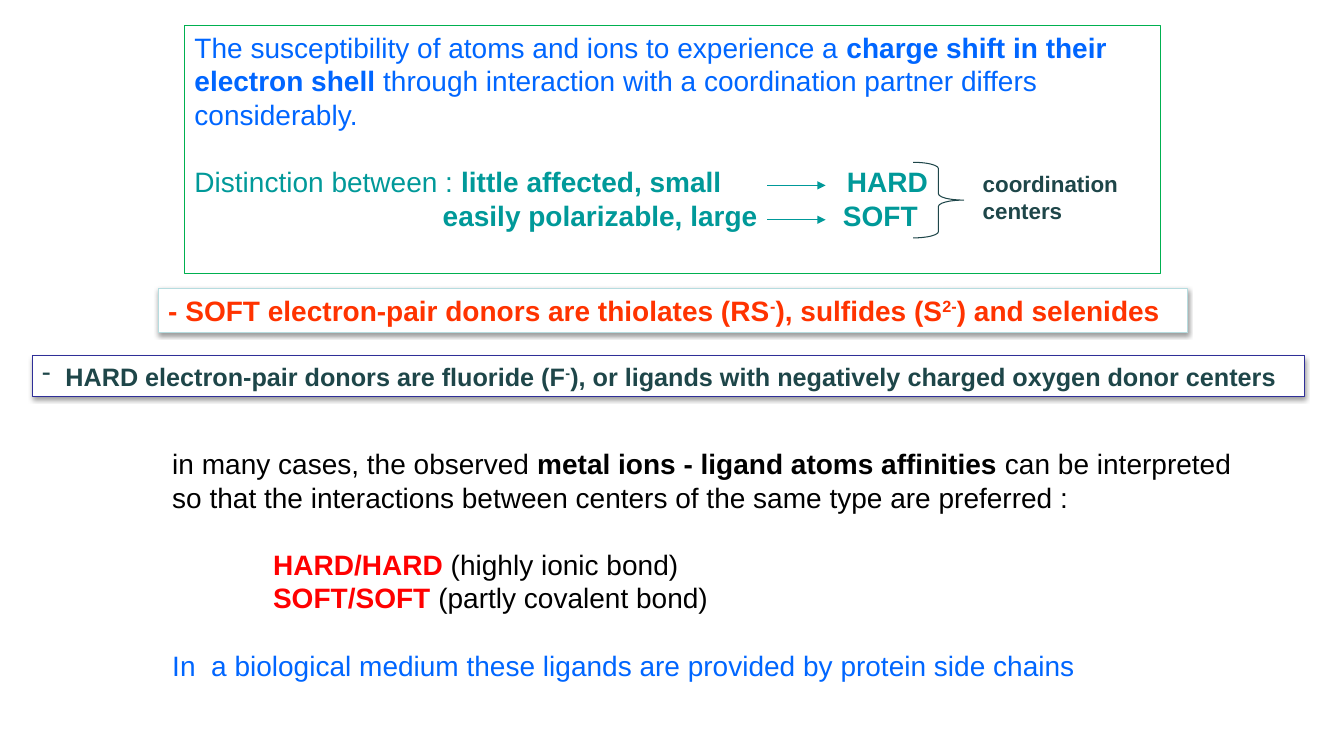
import pptx
import pptx.util
import pptx.dml.color
import pptx.oxml
import pptx.oxml.ns
import pptx.enum.shapes
import pptx.enum.text

COLORS = {
    "blue": "0066FF", "teal": "009999", "dark": "1E4649", "orange": "FF3300",
    "red": "FF0000", "black": "000000", "white": "FFFFFF",
    "green edge": "00B050", "pale edge": "B6DCDF", "navy edge": "2F2F98",
}
SHAPES = pptx.enum.shapes.MSO_SHAPE
NAMESPACE = pptx.oxml.ns.nsdecls("a")


class Page:
    """Draws on one slide, with lengths in percent of the slide's size."""

    font = "Arial"
    line_width = 0.75
    leading = 1.2

    def __init__(self, deck):
        self.deck = deck
        self.shapes = deck.slides.add_slide(deck.slide_layouts[6]).shapes

    def across(self, share):
        return round(self.deck.slide_width * share / 100)

    def down(self, share):
        return round(self.deck.slide_height * share / 100)

    def area(self, left, top, width, height):
        return self.across(left), self.down(top), self.across(width), self.down(height)

    def color(self, name):
        return pptx.dml.color.RGBColor.from_string(COLORS[name])

    def add_xml(self, parent, markup):
        tag, rest = markup.split(" ", 1)
        parent.append(pptx.oxml.parse_xml(f"<{tag} {NAMESPACE} {rest}"))

    def outline(self, item, edge):
        item.line.color.rgb = self.color(edge)
        item.line.width = pptx.util.Pt(self.line_width)

    def shape(self, kind, area, edge, fill=None):
        item = self.shapes.add_shape(kind, *self.area(*area))
        item.shadow.inherit = False
        self.outline(item, edge)
        if fill:
            item.fill.solid()
            item.fill.fore_color.rgb = self.color(fill)
        else:
            item.fill.background()
        return item

    def raised(self, area, edge):
        item = self.shape(SHAPES.RECTANGLE, area, edge, "white")
        effects = item._element.spPr.find(pptx.oxml.ns.qn("a:effectLst"))
        self.add_xml(effects, 'a:outerShdw blurRad="39370" dist="20320" dir="5400000" '
                     'rotWithShape="0"><a:srgbClr val="000000"><a:alpha val="38000"/>'
                     '</a:srgbClr></a:outerShdw>')
        return item

    def text_box(self, area):
        return self.shapes.add_textbox(*self.area(*area))

    def brace(self, area, edge):
        item = self.shape(SHAPES.RIGHT_BRACE, area, edge)
        item.adjustments[0] = 0.125

    def arrow(self, start, end, height, edge):
        item = self.shapes.add_connector(
            pptx.enum.shapes.MSO_CONNECTOR.STRAIGHT, self.across(start),
            self.down(height), self.across(end), self.down(height))
        self.outline(item, edge)
        self.add_xml(item.line._get_or_add_ln(), 'a:tailEnd type="triangle"/>')
        self.add_xml(item._element.spPr, "a:effectLst />")

    def fill_text(self, box, size, paragraphs):
        frame = box.text_frame
        frame.word_wrap = True
        frame.vertical_anchor = pptx.enum.text.MSO_ANCHOR.TOP
        for index, (spans, layout) in enumerate(paragraphs):
            para = frame.paragraphs[0] if index == 0 else frame.add_paragraph()
            self.arrange(para, size, **layout)
            for text, color, *marks in spans:
                span = para.add_run()
                span.text = text
                span.font.name = self.font
                span.font.size = pptx.util.Pt(size)
                span.font.color.rgb = self.color(color)
                span.font.bold = "bold" in marks
                if "raised" in marks:
                    span.font._element.set("baseline", "30000")

    def arrange(self, para, size, gap=False, margin=0, bullet=None, tabs=()):
        para.alignment = pptx.enum.text.PP_ALIGN.LEFT
        para.line_spacing = pptx.util.Pt(size * self.leading)
        para.space_before = pptx.util.Pt(size * self.leading if gap else 0)
        settings = para._p.get_or_add_pPr()
        if margin:
            settings.set("marL", str(self.across(margin)))
        if bullet:
            settings.set("indent", str(-self.across(margin)))
            self.add_xml(settings, f'a:buChar char="{bullet}"/>')
        if tabs:
            stops = "".join(f'<a:tab pos="{self.across(stop)}" algn="l"/>' for stop in tabs)
            self.add_xml(settings, f"a:tabLst >{stops}</a:tabLst>")


def main():
    deck = pptx.Presentation()
    deck.slide_width = pptx.util.Inches(13.33)
    deck.slide_height = pptx.util.Inches(7.5)
    page = Page(deck)

    distinction = page.shape(SHAPES.RECTANGLE, (13.73, 3.33, 72.6, 32.8), "green edge")
    page.fill_text(distinction, 20, [
        ([("The susceptibility of atoms and ions to experience a ", "blue"),
          ("charge shift in their electron shell ", "blue", "bold"),
          ("through interaction with a coordination partner differs considerably.", "blue")], {}),
        ([("Distinction between : ", "teal"),
          ("little affected, small\tHARD", "teal", "bold")], {"gap": True, "tabs": [48.55]}),
        ([("\teasily polarizable, large\tSOFT", "teal", "bold")], {"tabs": [18.47, 48.25]}),
    ])
    for height in (24.53, 29.07):
        page.arrow(57.08, 61.43, height, "teal")
    centers = page.text_box((72.38, 21.87, 16.28, 8.53))
    page.fill_text(centers, 16, [([("coordination centers", "dark", "bold")], {})])
    page.brace((67.95, 21.47, 3.75, 10), "dark")

    soft_donors = page.raised((11.78, 38.13, 76.58, 5.87), "pale edge")
    page.fill_text(soft_donors, 20, [
        ([("- SOFT electron-pair donors are thiolates (RS", "orange", "bold"),
          ("-", "orange", "bold", "raised"),
          ("), sulfides (S", "orange", "bold"),
          ("2-", "orange", "bold", "raised"),
          (") and selenides", "orange", "bold")], {}),
    ])
    hard_donors = page.raised((2.4, 47.07, 94.65, 5.33), "navy edge")
    page.fill_text(hard_donors, 18, [
        ([("HARD electron-pair donors are fluoride (F", "dark", "bold"),
          ("-", "dark", "bold", "raised"),
          ("), or ligands with negatively charged oxygen donor centers", "dark", "bold")],
         {"margin": 1.73, "bullet": "-"}),
    ])

    affinities = page.text_box((12.08, 58.4, 81.15, 32.8))
    page.fill_text(affinities, 20, [
        ([("in many cases, the observed ", "black"),
          ("metal ions - ligand atoms affinities", "black", "bold"),
          (" can be interpreted so that the interactions between centers"
           " of the same type are preferred :", "black")], {}),
        ([("HARD/HARD", "red", "bold"), (" (highly ionic bond)", "black")],
         {"gap": True, "margin": 7.5}),
        ([("SOFT/SOFT", "red", "bold"), (" (partly covalent bond)", "black")],
         {"margin": 7.5}),
        ([("In  a biological medium these ligands are provided by protein side chains", "blue")],
         {"gap": True}),
    ])
    deck.save("out.pptx")


if __name__ == "__main__":
    main()
